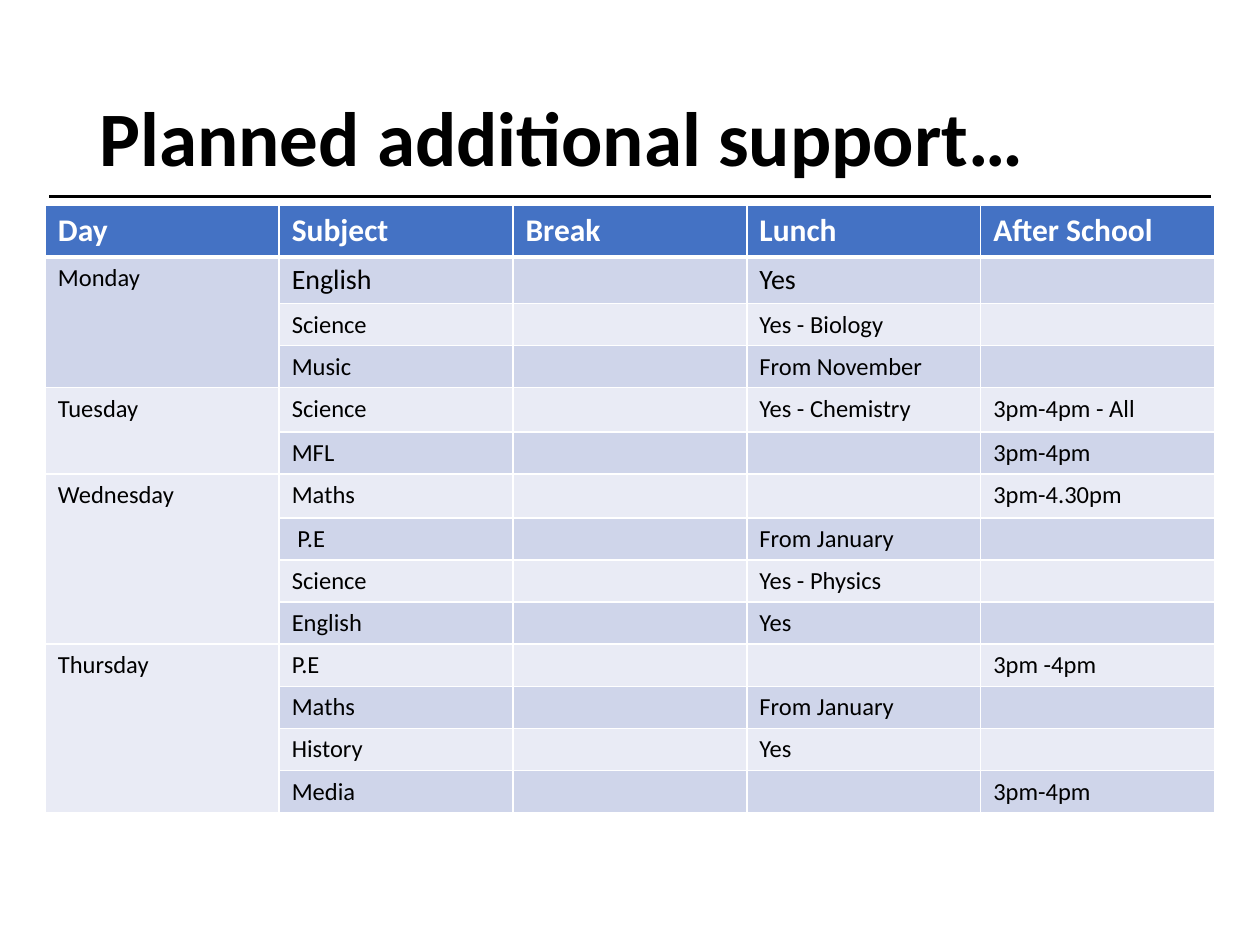
import pptx
import pptx.util
import pptx.dml.color
import pptx.enum.shapes
import pptx.enum.text
import pptx.oxml.ns
from lxml import etree

Inches = pptx.util.Inches
Pt = pptx.util.Pt
qn = pptx.oxml.ns.qn

COLORS = {"ink": "000000", "paper": "FFFFFF", "head": "4472C4",
          "dark": "CFD5EA", "light": "E9EBF5"}
HEADS = ["Day", "Subject", "Break", "Lunch", "After School"]
# Each day lists subject, break, lunch and after school
DAYS = {
    "Monday": [("English", "", "Yes", ""),
               ("Science", "", "Yes - Biology", ""),
               ("Music", "", "From November", "")],
    "Tuesday": [("Science", "", "Yes - Chemistry", "3pm-4pm - All"),
                ("MFL", "", "", "3pm-4pm")],
    "Wednesday": [("Maths", "", "", "3pm-4.30pm"),
                  (" P.E", "", "From January ", ""),
                  ("Science", "", "Yes - Physics", ""),
                  ("English", "", "Yes", "")],
    "Thursday": [("P.E", "", "", "3pm -4pm"),
                 ("Maths", "", "From January", ""),
                 ("History", "", "Yes", ""),
                 ("Media", "", "", "3pm-4pm")],
}
TALL = {0: 0.41, 1: 0.37, 4: 0.35, 6: 0.35}


def color(name):
    return pptx.dml.color.RGBColor.from_string(COLORS[name])


def style(run, size, ink, bold):
    form = {"name": "Calibri", "size": Pt(size), "bold": bold}
    for key, value in form.items():
        setattr(run.font, key, value)
    run.font.color.rgb = color(ink)


def add_title(slide, left, top, width, height):
    box = slide.shapes.add_textbox(Inches(left), Inches(top),
                                   Inches(width), Inches(height))
    frame = box.text_frame
    form = {"word_wrap": True,
            "vertical_anchor": pptx.enum.text.MSO_ANCHOR.MIDDLE}
    for key, value in form.items():
        setattr(frame, key, value)
    para = frame.paragraphs[0]
    para.line_spacing = 0.9
    run = para.add_run()
    run.text = "Planned additional support…"
    style(run, 44, "ink", True)


def add_rule(slide, left, top, width):
    line = slide.shapes.add_connector(
        pptx.enum.shapes.MSO_CONNECTOR.STRAIGHT, Inches(left), Inches(top),
        Inches(left + width), Inches(top))
    line.line.color.rgb = color("ink")
    line.line.width = Pt(2)
    etree.SubElement(line._element.spPr, qn("a:effectLst"))


def add_edges(cell, base):
    props = cell._tc.get_or_add_tcPr()
    widths = {"a:lnL": 1, "a:lnR": 1, "a:lnT": 1, "a:lnB": base}
    for spot, (tag, width) in enumerate(widths.items()):
        edge = etree.Element(qn(tag), w=str(Pt(width)))
        fill = etree.SubElement(edge, qn("a:solidFill"))
        etree.SubElement(fill, qn("a:srgbClr"), val=COLORS["paper"])
        props.insert(spot, edge)


def fill_cell(cell, text, size, fill, ink="ink", bold=False, base=1):
    cell.fill.solid()
    cell.fill.fore_color.rgb = color(fill)
    add_edges(cell, base)
    para = cell.text_frame.paragraphs[0]
    if text:
        run = para.add_run()
        run.text = text
        style(run, size, ink, bold)
    else:
        # Empty cells keep the text size so that rows stay low
        etree.SubElement(para._p, qn("a:endParaRPr"), sz=str(size * 100))


def add_plan(slide, left, top, width, height):
    rows = 1 + sum(len(day) for day in DAYS.values())
    table = slide.shapes.add_table(rows, len(HEADS), Inches(left), Inches(top),
                                   Inches(width), Inches(height)).table
    for col in table.columns:
        col.width = Inches(width / len(HEADS))
    for pos, row in enumerate(table.rows):
        row.height = Inches(TALL.get(pos, 0.33))

    # Header row
    for col, text in enumerate(HEADS):
        fill_cell(table.cell(0, col), text, 18, "head", "paper", True, 3)

    # Day blocks on banded rows
    row = 1
    for day, items in DAYS.items():
        first = row
        for item in items:
            band = "dark" if row % 2 else "light"
            name = day if row == first else ""
            for col, text in enumerate((name, *item)):
                size = 16 if row == 1 and col else 14
                fill_cell(table.cell(row, col), text, size, band)
            row += 1
        table.cell(first, 0).merge(table.cell(row - 1, 0))


def main():
    deck = pptx.Presentation()
    deck.slide_width, deck.slide_height = Inches(10), Inches(7.5)
    slide = deck.slides.add_slide(deck.slide_layouts[6])
    add_rule(slide, 0.39, 1.56, 9.22)
    add_title(slide, 0.69, 0.4, 8.62, 1.45)
    add_plan(slide, 0.36, 1.63, 9.28, 4.81)
    deck.save("out.pptx")


if __name__ == "__main__":
    main()
